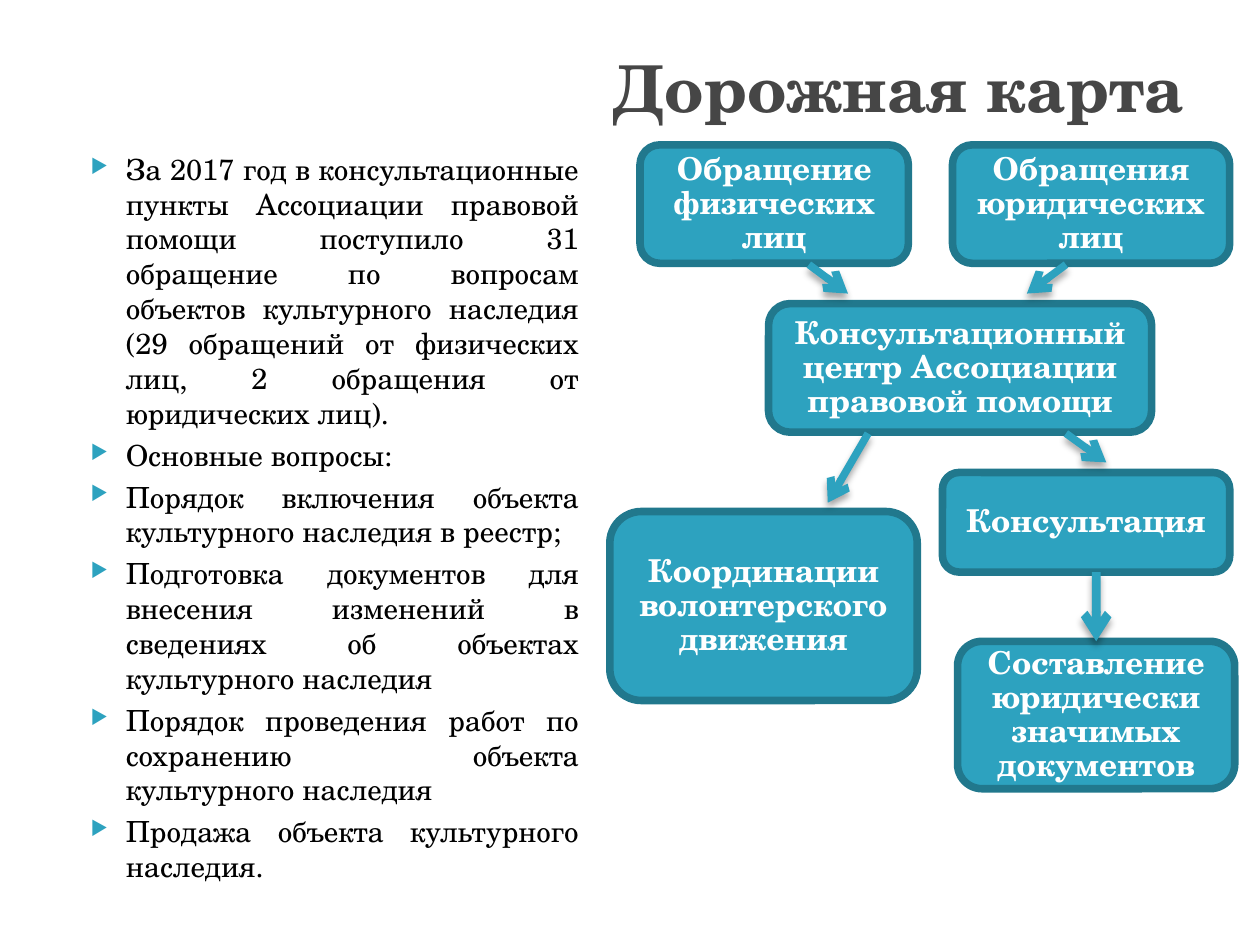
import pptx
import pptx.util
import pptx.dml.color
import pptx.enum.shapes
import pptx.enum.text
import pptx.oxml
import pptx.oxml.ns

Inches = pptx.util.Inches
Pt = pptx.util.Pt
ALIGN = pptx.enum.text.PP_ALIGN
ANCHOR = pptx.enum.text.MSO_ANCHOR
NS = pptx.oxml.ns.nsdecls("a")
COLORS = {
    "title": "464646",
    "body": "000000",
    "accent": "2DA2BF",
    "border": "21788D",
    "box_text": "FFFFFF",
    "shadow": "000000",
}


def rgb(name):
    return pptx.dml.color.RGBColor.from_string(COLORS[name])


class RoadmapSlide:
    font_name = "TeX Gyre Schola"
    line_width = 4.33

    def __init__(self, slide):
        self.slide = slide

    def add_run(self, paragraph, words, size, color, bold=False):
        run = paragraph.add_run()
        run.text = words
        run.font.name = self.font_name
        run.font.size = Pt(size)
        run.font.bold = bold
        run.font.color.rgb = rgb(color)

    def text_frame(self, left, top, width, height):
        frame = self.slide.shapes.add_textbox(
            Inches(left), Inches(top), Inches(width), Inches(height)).text_frame
        frame.word_wrap = True
        return frame

    def title(self, words, *place):
        frame = self.text_frame(*place)
        frame.vertical_anchor = ANCHOR.MIDDLE
        heading = frame.paragraphs[0]
        heading.alignment = ALIGN.RIGHT
        self.add_run(heading, words, 36.9, "title", bold=True)

    def bullets(self, items, *place):
        frame = self.text_frame(*place)
        for index, words in enumerate(items):
            item = frame.add_paragraph() if index else frame.paragraphs[0]
            item.alignment = ALIGN.JUSTIFY
            item.space_before = Pt(4 if index else 0)
            props = item._p.get_or_add_pPr()
            props.set("marL", str(Inches(0.4)))
            props.set("indent", str(Inches(-0.28)))
            for xml in (
                f'<a:buClr {NS}><a:srgbClr val="{COLORS["accent"]}"/></a:buClr>',
                f'<a:buSzPct {NS} val="68000"/>',
                f'<a:buChar {NS} char="▶"/>',
            ):
                props.append(pptx.oxml.parse_xml(xml))
            self.add_run(item, words, 16.6, "body")

    def box(self, words, left, top, width, height):
        box = self.slide.shapes.add_shape(
            pptx.enum.shapes.MSO_SHAPE.ROUNDED_RECTANGLE,
            Inches(left), Inches(top), Inches(width), Inches(height))
        box.shadow.inherit = False
        box.fill.solid()
        box.fill.fore_color.rgb = rgb("accent")
        box.line.color.rgb = rgb("border")
        box.line.width = Pt(self.line_width)
        box.text_frame.word_wrap = True
        box.text_frame.vertical_anchor = ANCHOR.MIDDLE
        label = box.text_frame.paragraphs[0]
        label.alignment = ALIGN.CENTER
        label.line_spacing = 0.9
        self.add_run(label, words, 18, "box_text", bold=True)
        return box

    def arrow(self, x1, y1, x2, y2, width=line_width):
        arrow = self.slide.shapes.add_connector(
            pptx.enum.shapes.MSO_CONNECTOR.STRAIGHT,
            Inches(x1), Inches(y1), Inches(x2), Inches(y2))
        arrow.line.color.rgb = rgb("accent")
        arrow.line.width = Pt(width)
        arrow.line._get_or_add_ln().append(
            pptx.oxml.parse_xml(f'<a:tailEnd {NS} type="arrow"/>'))
        arrow._element.spPr.append(pptx.oxml.parse_xml(
            f'<a:effectLst {NS}><a:outerShdw blurRad="{Pt(4)}" dist="{Pt(3)}" '
            f'dir="5400000" rotWithShape="0"><a:srgbClr val="{COLORS["shadow"]}">'
            '<a:alpha val="35000"/></a:srgbClr></a:outerShdw></a:effectLst>'))
        return arrow


def main():
    deck = pptx.Presentation()
    deck.slide_width = Inches(10)
    deck.slide_height = Inches(7.5)
    roadmap = RoadmapSlide(deck.slides.add_slide(deck.slide_layouts[6]))

    # Title and the list of questions
    roadmap.title("Дорожная карта", 0.5, 0.3, 9, 0.77)
    roadmap.bullets([
        "За 2017 год в консультационные пункты Ассоциации правовой помощи "
        "поступило 31 обращение по вопросам объектов культурного наследия "
        "(29 обращений от физических лиц, 2 обращения от юридических лиц).",
        "Основные вопросы:",
        "Порядок включения объекта культурного наследия в реестр;",
        "Подготовка документов для внесения изменений в сведениях "
        "об объектах культурного наследия",
        "Порядок проведения работ по сохранению объекта культурного наследия",
        "Продажа объекта культурного наследия.",
    ], 0.5, 1.15, 4.19, 5.75)

    # Flowchart boxes
    roadmap.box("Обращения юридических лиц", 7.56, 1.15, 2.2, 0.94)
    roadmap.box("Обращение физических лиц", 5.08, 1.15, 2.13, 0.94)
    roadmap.box("Координации волонтерского движения", 4.84, 4.06, 2.44, 1.5)
    documents = roadmap.box("Составление юридически значимых документов",
                            7.6, 5.09, 2.2, 1.17)
    roadmap.box("Консультация", 7.48, 3.75, 2.28, 0.79)
    roadmap.box("Консультационный центр Ассоциации правовой помощи",
                6.1, 2.41, 3.04, 1.02)

    # Arrows between the steps
    for ends in (
        (6.42, 2.1, 6.73, 2.33),
        (8.46, 2.1, 8.15, 2.33),
        (8.46, 3.44, 8.78, 3.67),
        (6.89, 3.44, 6.57, 3.99),
    ):
        roadmap.arrow(*ends)
    to_documents = roadmap.arrow(8.7, 4.54, 8.7, 5.09, width=5)
    to_documents.end_connect(documents, 0)

    deck.save("out.pptx")


if __name__ == "__main__":
    main()
